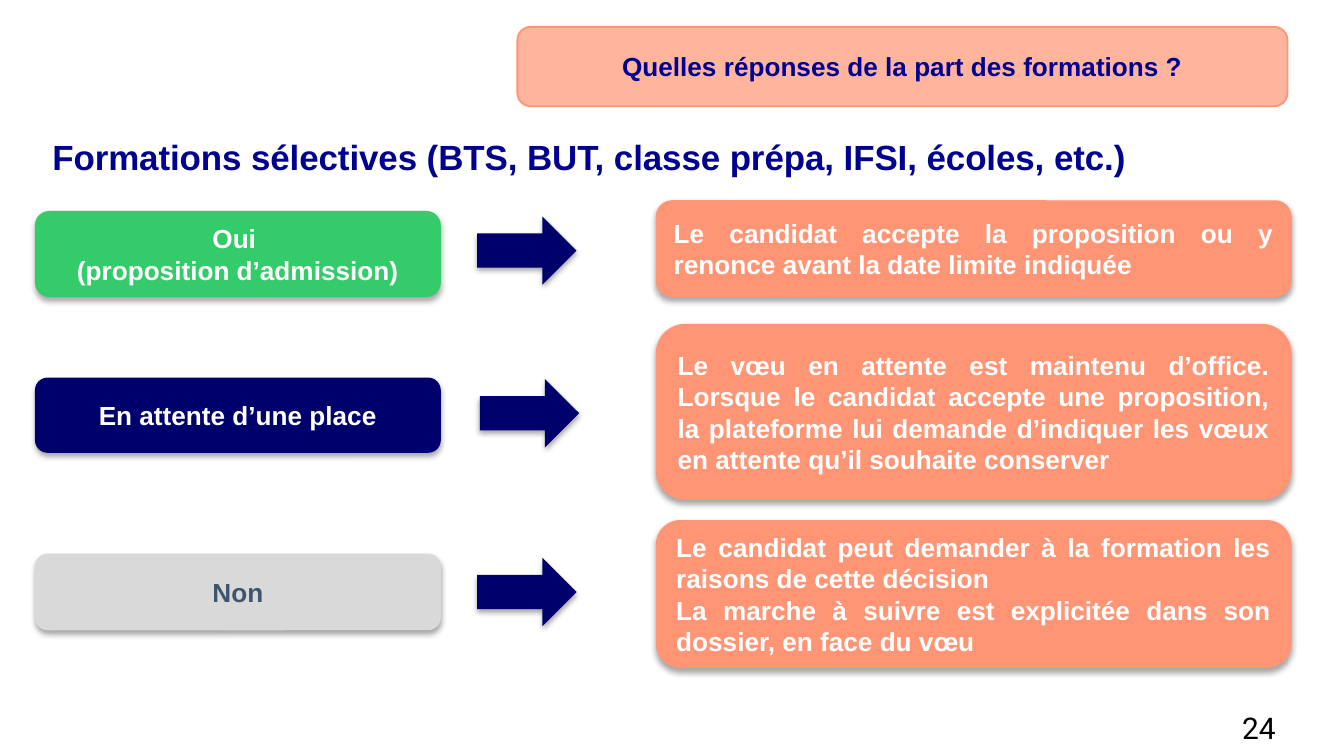
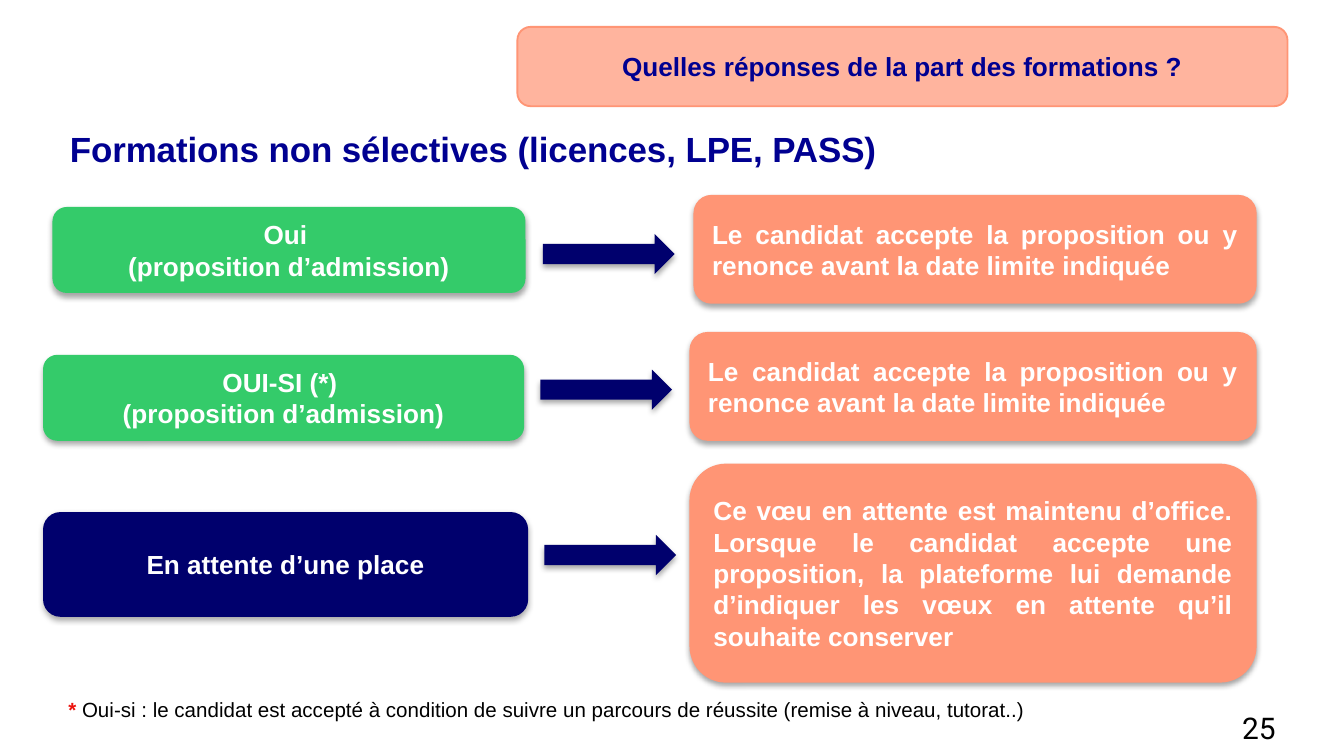
"""Build two slides on the replies that courses give to applicants."""
from copy import deepcopy

from lxml import etree
from pptx import Presentation
from pptx.dml.color import RGBColor
from pptx.enum.shapes import MSO_SHAPE
from pptx.enum.text import MSO_ANCHOR, MSO_AUTO_SIZE, PP_ALIGN
from pptx.oxml.ns import qn
from pptx.util import Inches, Pt

ROUNDED, ARROW, RECTANGLE = MSO_SHAPE.ROUNDED_RECTANGLE, MSO_SHAPE.RIGHT_ARROW, MSO_SHAPE.RECTANGLE
LEFT, CENTER, RIGHT, JUSTIFY = PP_ALIGN.LEFT, PP_ALIGN.CENTER, PP_ALIGN.RIGHT, PP_ALIGN.JUSTIFY
TOP, MIDDLE = MSO_ANCHOR.TOP, MSO_ANCHOR.MIDDLE
NO_FIT = MSO_AUTO_SIZE.NONE

WHITE = RGBColor(0xFF, 0xFF, 0xFF)
BLACK = RGBColor(0, 0, 0)
BLUE = RGBColor(0x00, 0x00, 0x91)
NAVY = RGBColor(0x00, 0x00, 0x6D)
GREEN = RGBColor(0x34, 0xCB, 0x6A)
CORAL = RGBColor(0xFF, 0x95, 0x75)
GREY = RGBColor(0xD9, 0xD9, 0xD9)
SLATE = RGBColor(0x3D, 0x56, 0x6E)
RED = RGBColor(0xEC, 0x13, 0x0E)

BANNER = "Quelles réponses de la part des formations ?"
YES = "Oui \n(proposition d’admission)"
YES_IF = "OUI-SI (*) \n(proposition d’admission)"
WAITING = "En attente d’une place"
ACCEPT = "Le candidat accepte la proposition ou y renonce avant la date limite indiquée "
KEPT = (" vœu en attente est maintenu d’office. Lorsque le candidat accepte une proposition, "
        "la plateforme lui demande d’indiquer les vœux en attente qu’il souhaite conserver")
REASONS = ("Le candidat peut demander à la formation les raisons de cette décision",
           "La marche à suivre est explicitée dans son dossier, en face du vœu ")
NOTE = "Oui-si : le candidat est accepté à condition de suivre un parcours de réussite (remise à niveau, tutorat..)"


def write(para, text, size=14, color=WHITE, bold=True, font="Arial", align=CENTER):
    """Add formatted text to a paragraph, with a line break at each newline."""
    para.alignment = align
    for index, line in enumerate(text.split("\n")):
        if index:
            para.add_line_break()
        span = para.add_run()
        span.text = line
        span.font.name, span.font.size, span.font.bold = font, Pt(size), bold
        span.font.color.rgb = color
        if index:
            span._r.getprevious().insert(0, deepcopy(span._r.rPr))


class Page:
    """Hold the deck style and the current slide."""

    def __init__(self, deck, heading, heading_at, number):
        """Add a slide with its heading, banner and number."""
        self.slide = deck.slides.add_slide(deck.slide_layouts[5])
        self.heading(heading, heading_at)
        self.banner()
        self.number(number)

    def heading(self, text, at):
        """Move and format the title placeholder."""
        box = self.slide.shapes.title
        box.left, box.top, box.width, box.height = map(Inches, at)
        frame = box.text_frame
        frame.word_wrap, frame.auto_size, frame.vertical_anchor = True, NO_FIT, TOP
        frame.margin_left = frame.margin_right = Inches(0.13)
        frame.margin_top = frame.margin_bottom = Inches(0.07)
        write(frame.paragraphs[0], text, size=18.66, color=BLUE, align=LEFT)

    def shape(self, kind, at, fill, shadow=False):
        """Add a filled preset shape without outline."""
        shape = self.slide.shapes.add_shape(kind, *map(Inches, at))
        shape.fill.solid()
        shape.fill.fore_color.rgb = fill
        shape.line.fill.background()
        shape.shadow.inherit = False
        shape.text_frame.word_wrap = True
        if shadow:
            effects = shape._element.spPr.find(qn("a:effectLst"))
            outer = etree.SubElement(effects, qn("a:outerShdw"), blurRad=str(Pt(3.1)), dist=str(Pt(1.8)),
                                     dir="5400000", algn="t", rotWithShape="0")
            tint = etree.SubElement(outer, qn("a:srgbClr"), val=str(BLACK))
            etree.SubElement(tint, qn("a:alpha"), val="35000")
        return shape

    def card(self, at, texts, fill, shadow=True, **style):
        """Add a rounded card with one paragraph per text."""
        card = self.shape(ROUNDED, at, fill, shadow)
        frame = card.text_frame
        frame.vertical_anchor = MIDDLE
        for index, text in enumerate(texts):
            write(frame.add_paragraph() if index else frame.paragraphs[0], text, **style)
        return card

    def banner(self):
        """Add the translucent banner at the top right."""
        banner = self.card((3.85, 0.2, 5.73, 0.59), [BANNER], CORAL, shadow=False, color=BLUE)
        banner.line.color.rgb = CORAL
        banner.line.width = Pt(1)
        tint = banner._element.spPr.find(qn("a:solidFill"))[0]
        etree.SubElement(tint, qn("a:alpha"), val="70000")

    def number(self, value):
        """Add the page number at the bottom right."""
        box = self.slide.shapes.add_textbox(*map(Inches, (8.31, 5.23, 1.28, 0.39)))
        box.text_frame.word_wrap = True
        write(box.text_frame.paragraphs[0], str(value), size=16, color=BLACK,
              bold=False, font="Roboto", align=RIGHT)

    def reply(self, label, label_at, fill, arrow_at, answers, answer_at, color=WHITE):
        """Add a reply, its arrow and what the applicant does next."""
        self.card(label_at, [label], fill, color=color)
        self.shape(ARROW, arrow_at, NAVY, shadow=True)
        self.card(answer_at, answers, CORAL, align=JUSTIFY)

    def footnote(self, mark, text, at):
        """Add a note that opens with a red mark."""
        frame = self.shape(RECTANGLE, at, WHITE).text_frame
        frame.vertical_anchor = TOP
        para = frame.paragraphs[0]
        write(para, mark + " ", size=11, color=RED, align=LEFT)
        write(para, text, size=11, color=BLACK, bold=False, align=LEFT)


def main():
    """Build and save the deck."""
    deck = Presentation()
    deck.slide_width, deck.slide_height = Inches(10), Inches(10 * 9 / 16)

    page = Page(deck, "Formations sélectives (BTS, BUT, classe prépa, IFSI, écoles, etc.)",
                (0.26, 0.94, 9.36, 0.86), 24)
    page.reply(YES, (0.26, 1.57, 3.02, 0.64), GREEN, (3.55, 1.61, 0.74, 0.51),
               [ACCEPT], (4.88, 1.49, 4.73, 0.72))
    page.reply(WAITING, (0.26, 2.81, 3.02, 0.56), NAVY, (3.57, 2.82, 0.74, 0.51),
               ["Le" + KEPT], (4.88, 2.41, 4.73, 1.31))
    page.reply("Non", (0.26, 4.12, 3.02, 0.57), GREY, (3.55, 4.15, 0.74, 0.51),
               REASONS, (4.88, 3.87, 4.73, 1.1), color=SLATE)

    page = Page(deck, "Formations non sélectives (licences, LPE, PASS)", (0.39, 0.88, 9.2, 0.49), 25)
    page.reply(YES, (0.39, 1.54, 3.52, 0.64), GREEN, (4.04, 1.74, 0.98, 0.3),
               [ACCEPT], (5.16, 1.45, 4.19, 0.81))
    page.reply(YES_IF, (0.32, 2.64, 3.58, 0.64), GREEN, (4.02, 2.75, 0.98, 0.3),
               [ACCEPT], (5.13, 2.47, 4.22, 0.81))
    page.reply(WAITING, (0.32, 3.81, 3.61, 0.78), NAVY, (4.05, 3.98, 0.98, 0.3),
               ["Ce" + KEPT], (5.13, 3.45, 4.22, 1.63))
    page.footnote("*", NOTE, (0.41, 5.14, 8.37, 0.48))

    deck.save("out.pptx")


if __name__ == "__main__":
    main()
